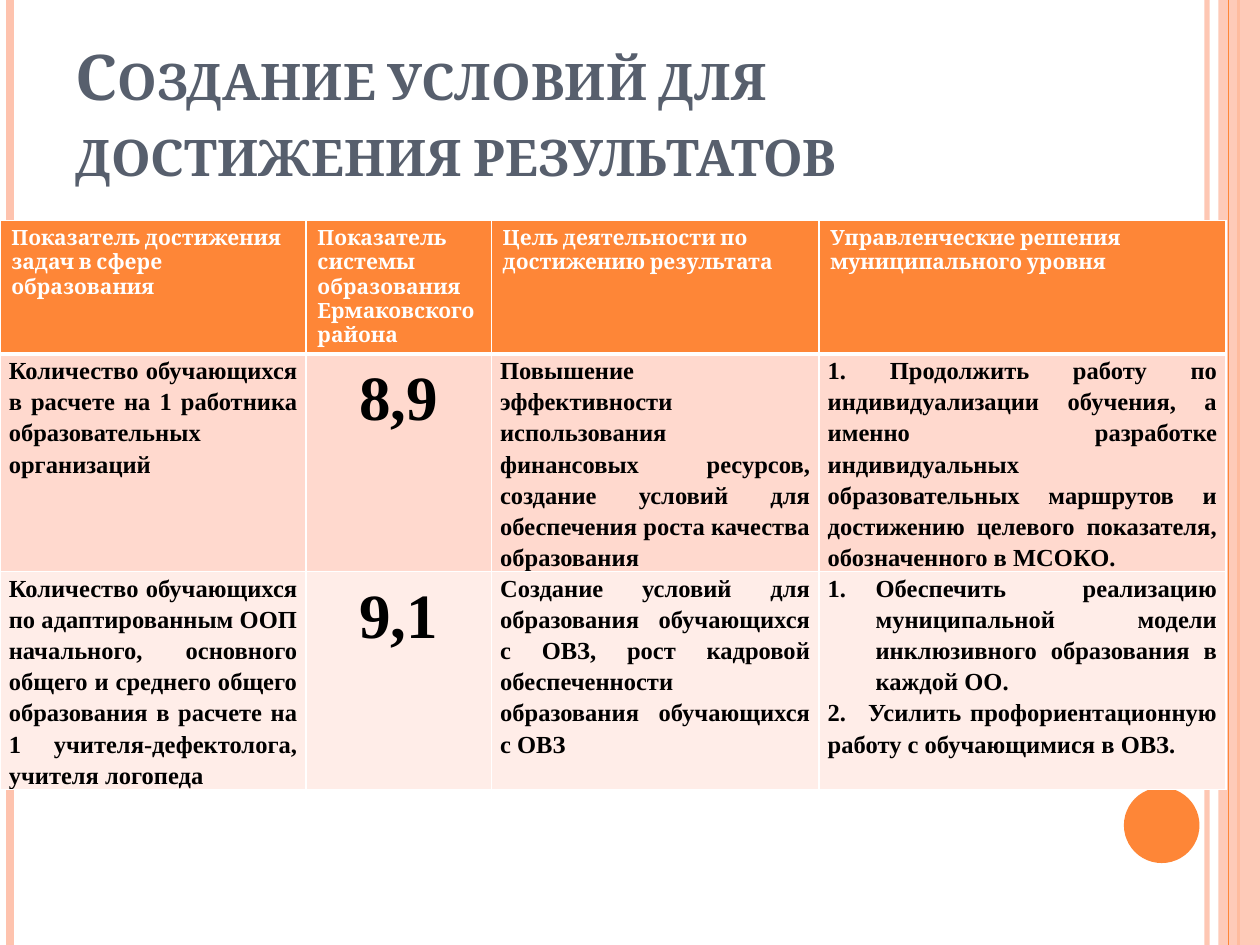
import pptx
import pptx.util
import pptx.dml.color
import pptx.enum.shapes
import pptx.enum.text
import pptx.oxml
import pptx.oxml.ns
from lxml import etree

Inches = pptx.util.Inches
Pt = pptx.util.Pt
ALIGN = pptx.enum.text.PP_ALIGN
SHAPE = pptx.enum.shapes.MSO_SHAPE

COLORS = {
    "accent": "FE8637", "stripe": "FEC3AE", "title": "575F6D",
    "white": "FFFFFF", "black": "000000",
    "row_odd": "FFD9CE", "row_even": "FFEDE8",
}
HEADER = [
    ["Показатель достижения задач в сфере образования"],
    ["Показатель", "системы образования Ермаковского района"],
    ["Цель деятельности по достижению результата"],
    ["Управленческие решения муниципального уровня"],
]
BODY = [
    [
        ["Количество обучающихся в расчете на 1 работника образовательных организаций"],
        ["8,9"],
        ["Повышение эффективности использования финансовых ресурсов, "
         "создание условий для обеспечения роста качества образования"],
        ["1. Продолжить работу по индивидуализации обучения, а именно разработке "
         "индивидуальных образовательных маршрутов и достижению целевого показателя, "
         "обозначенного в МСОКО."],
    ],
    [
        ["Количество обучающихся по адаптированным ООП начального, основного общего "
         "и среднего общего образования в расчете на 1 учителя-дефектолога, учителя логопеда"],
        ["9,1"],
        ["Создание условий для образования обучающихся с ОВЗ, рост кадровой "
         "обеспеченности образования обучающихся с ОВЗ"],
        ["Обеспечить реализацию муниципальной модели инклюзивного образования в каждой ОО. ",
         "2.\tУсилить профориентационную работу с обучающимися в ОВЗ."],
    ],
]
COLUMN_WIDTHS = [2.43, 1.47, 2.6, 3.23]
ROW_HEIGHTS = [0.75, 1.64, 1.64]
SCORE_COLUMN = 1


def rgb(name):
    return pptx.dml.color.RGBColor.from_string(COLORS[name])


def add_element(parent, tag, **attributes):
    return etree.SubElement(parent, pptx.oxml.ns.qn(tag), attributes)


def set_alpha(shape_format, percent):
    """Make the solid colour of a fill or line partly transparent."""
    for color in shape_format.iter(pptx.oxml.ns.qn("a:srgbClr")):
        add_element(color, "a:alpha", val=str(percent * 1000))


class SlideBuilder:
    heading_font = "Cambria"
    body_font = "Times New Roman"

    def __init__(self, page):
        self.page = page

    def format_para(self, para, font, size, color):
        for span in para.runs:
            span.font.name = font
            span.font.size = Pt(size)
            span.font.bold = True
            span.font.color.rgb = rgb(color)

    def vertical_line(self, x, color, width, alpha=None):
        line = self.page.shapes.add_connector(
            pptx.enum.shapes.MSO_CONNECTOR.STRAIGHT,
            Inches(x), Inches(0), Inches(x), Inches(7.5))
        line.line.color.rgb = rgb(color)
        line.line.width = Pt(width)
        if alpha:
            set_alpha(line._element.spPr, alpha)
        add_element(line._element.spPr, "a:effectLst")

    def shape(self, kind, left, top, width, height, color, alpha=None):
        shape = self.page.shapes.add_shape(
            kind, Inches(left), Inches(top), Inches(width), Inches(height))
        shape.shadow.inherit = False
        shape.fill.solid()
        shape.fill.fore_color.rgb = rgb(color)
        shape.line.fill.background()
        if alpha:
            set_alpha(shape._element.spPr, alpha)

    def title(self, text, left, top, width, height):
        box = self.page.shapes.title
        box.left, box.top = Inches(left), Inches(top)
        box.width, box.height = Inches(width), Inches(height)
        frame = box.text_frame
        frame.text = text
        frame.word_wrap = True
        frame.auto_size = pptx.enum.text.MSO_AUTO_SIZE.NONE
        frame.vertical_anchor = pptx.enum.text.MSO_ANCHOR.BOTTOM
        para = frame.paragraphs[0]
        para.alignment = ALIGN.LEFT
        self.format_para(para, self.heading_font, 36, "title")
        para.runs[0].font._element.set("cap", "small")

    def cell_borders(self, cell, top, bottom):
        properties = cell._tc.get_or_add_tcPr()
        widths = {"a:lnL": 1, "a:lnR": 1, "a:lnT": top, "a:lnB": bottom}
        for position, (tag, width) in enumerate(widths.items()):
            line = add_element(properties, tag, w=str(Pt(width)))
            add_element(add_element(line, "a:solidFill"), "a:srgbClr", val=COLORS["white"])
            properties.insert(position, line)

    def cell(self, cell, lines, fill, margins):
        """Fill a cell with paragraphs and return them."""
        cell.fill.solid()
        cell.fill.fore_color.rgb = rgb(fill)
        cell.margin_left = cell.margin_right = Inches(margins[0])
        cell.margin_top = cell.margin_bottom = Inches(margins[1])
        frame = cell.text_frame
        frame.text = "\n".join(lines)
        return frame.paragraphs

    def header_cell(self, cell, lines):
        for para in self.cell(cell, lines, "accent", (0.09, 0.05)):
            self.format_para(para, self.heading_font, 12, "white")
        self.cell_borders(cell, 1, 3)

    def body_cell(self, cell, lines, fill, is_score, top_border):
        paras = self.cell(cell, lines, fill, (0.07, 0))
        for para in paras:
            para.alignment = ALIGN.CENTER if is_score else ALIGN.JUSTIFY
            para.line_spacing = 1.15
            self.format_para(para, self.body_font, 36 if is_score else 14, "black")
            properties = para._p.get_or_add_pPr()
            if len(paras) > 1 and para._p is paras[0]._p:
                properties.set("marL", str(Inches(0.38)))
                properties.set("indent", str(-Inches(0.38)))
                add_element(properties, "a:buFont", typeface="+mj-lt")
                add_element(properties, "a:buAutoNum", type="arabicPeriod")
            tabs = add_element(properties, "a:tabLst")
            add_element(tabs, "a:tab", pos=str(Inches(0.32)), algn="l")
        self.cell_borders(cell, top_border, 1)

    def table(self, left, top, width, height):
        frame = self.page.shapes.add_table(
            len(ROW_HEIGHTS), len(COLUMN_WIDTHS),
            Inches(left), Inches(top), Inches(width), Inches(height))
        grid = frame.table
        for column, column_width in zip(grid.columns, COLUMN_WIDTHS):
            column.width = Inches(column_width)
        for row, row_height in zip(grid.rows, ROW_HEIGHTS):
            row.height = Inches(row_height)
        frame.height = Inches(height)
        for column, lines in enumerate(HEADER):
            self.header_cell(grid.cell(0, column), lines)
        for row, (texts, fill) in enumerate(zip(BODY, ["row_odd", "row_even"]), start=1):
            for column, lines in enumerate(texts):
                self.body_cell(grid.cell(row, column), lines, fill,
                               column == SCORE_COLUMN, 3 if row == 1 else 1)


def main():
    deck = pptx.Presentation()
    deck.slide_width, deck.slide_height = Inches(10), Inches(7.5)
    page = deck.slides.add_slide(deck.slide_layouts.get_by_name("Title Only"))
    builder = SlideBuilder(page)
    builder.vertical_line(9.58, "stripe", 3, alpha=93)
    builder.vertical_line(0.08, "stripe", 4.5)
    builder.vertical_line(9.83, "accent", 1.5)
    builder.shape(SHAPE.RECTANGLE, 9.67, 0, 0.33, 7.5, "stripe", alpha=87)
    builder.vertical_line(9.75, "accent", 0.75)
    builder.shape(SHAPE.OVAL, 8.92, 6.25, 0.6, 0.6, "accent")
    builder.title("Создание условий для достижения результатов", 0.5, 0.3, 8.17, 1.25)
    builder.table(0, 1.75, 9.72, 5.11)
    deck.save("out.pptx")


if __name__ == "__main__":
    main()
